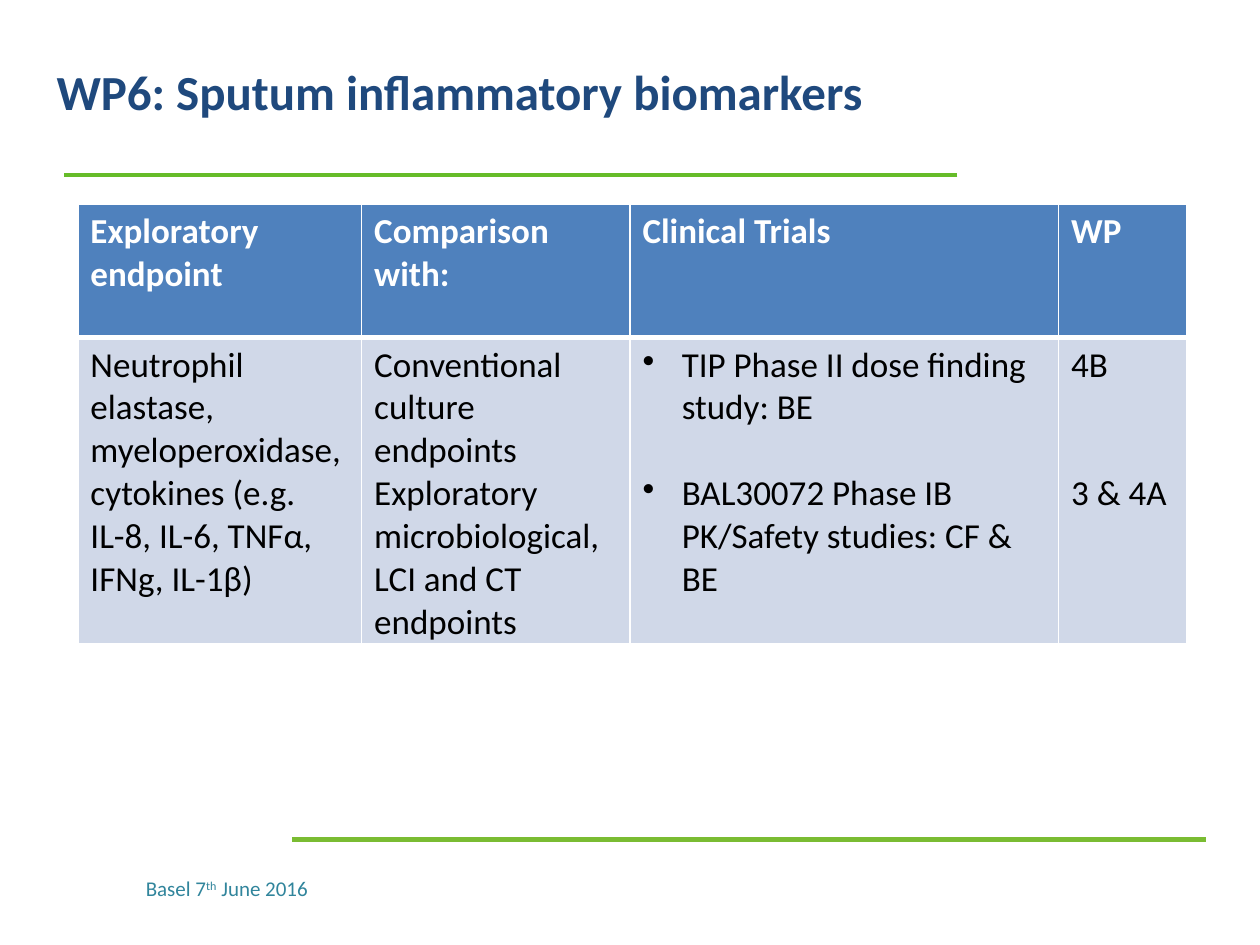
import pptx
import pptx.util
import pptx.dml.color
import pptx.enum.shapes
import pptx.enum.text
import pptx.oxml
import pptx.oxml.ns
from pptx.util import Cm

THEME = {
    "font": "Calibri",
    "title": "1F497D", "date": "31859C", "header": "4F81BD", "body": "D0D8E8",
    "white": "FFFFFF", "black": "000000",
    "title_size": 28, "table_size": 20, "date_size": 12, "blank_line": 24.4,
}
TITLE = "WP6: Sputum inflammatory biomarkers"
DATE = [("Basel 7", False), ("th", True), (" June 2016", False)]
RULES = [
    ((19.3, 3.53), (1.3, 3.53), "66BC29", 2.25),
    ((5.89, 16.92), (24.31, 16.92), "7ABC32", 2.5),
]
COLUMNS = [
    {"width": 5.72, "head": "Exploratory endpoint", "gap_lines": 0, "bullets": False,
     "body": ["Neutrophil elastase, myeloperoxidase, cytokines (e.g. IL-8, IL-6, TNFα, IFNg, IL-1β)"]},
    {"width": 5.41, "head": "Comparison with:", "gap_lines": 0, "bullets": False,
     "body": ["Conventional culture endpoints Exploratory microbiological, LCI and CT endpoints"]},
    {"width": 8.64, "head": "Clinical Trials", "gap_lines": 1, "bullets": True,
     "body": ["TIP Phase II dose finding study: BE",
              "BAL30072 Phase IB PK/Safety studies: CF & BE"]},
    {"width": 2.59, "head": "WP", "gap_lines": 2, "bullets": False,
     "body": ["4B", "3 & 4A"]},
]
ROW_HEIGHTS = [2.69, 6.1]
TABLE_LEFT, TABLE_TOP = 1.57, 4.11


def rgb(name):
    return pptx.dml.color.RGBColor.from_string(THEME.get(name, name))


def style(span, size, colour, bold=False):
    span.font.name = THEME["font"]
    span.font.size = pptx.util.Pt(THEME[size])
    span.font.color.rgb = rgb(colour)
    span.font.bold = bold


def add_box(page, left, top, width, height):
    box = page.shapes.add_textbox(Cm(left), Cm(top), Cm(width), Cm(height))
    box.text_frame.word_wrap = True
    return box.text_frame


def add_rule(page, start, end, colour, weight):
    rule = page.shapes.add_connector(
        pptx.enum.shapes.MSO_CONNECTOR.STRAIGHT, *map(Cm, start + end))
    rule.line.color.rgb = rgb(colour)
    rule.line.width = pptx.util.Pt(weight)
    rule._element.spPr.append(pptx.oxml.parse_xml(
        f'<a:effectLst {pptx.oxml.ns.nsdecls("a")}/>'))


def add_border(cell, side, weight):
    cell._tc.get_or_add_tcPr().append(pptx.oxml.parse_xml(
        f'<a:ln{side} {pptx.oxml.ns.nsdecls("a")} w="{pptx.util.Pt(weight)}">'
        f'<a:solidFill><a:srgbClr val="{THEME["white"]}"/></a:solidFill></a:ln{side}>'))


def add_bullet(para):
    properties = para._p.get_or_add_pPr()
    properties.set("marL", str(Cm(0.79)))
    properties.set("indent", str(-Cm(0.79)))
    properties.append(pptx.oxml.parse_xml(
        f'<a:buChar {pptx.oxml.ns.nsdecls("a")} char="•"/>'))


def fill_cell(cell, lines, fill, colour, bold, edges, gap_lines=0, bullets=False):
    for side, weight in zip("LRTB", edges):
        add_border(cell, side, weight)
    cell.fill.solid()
    cell.fill.fore_color.rgb = rgb(fill)
    cell.text_frame.text = "\n".join(lines)
    for index, para in enumerate(cell.text_frame.paragraphs):
        if index and gap_lines:
            para.space_before = pptx.util.Pt(gap_lines * THEME["blank_line"])
        if bullets:
            add_bullet(para)
        for span in para.runs:
            style(span, "table_size", colour, bold)


def add_endpoint_table(page):
    width = sum(column["width"] for column in COLUMNS)
    table = page.shapes.add_table(
        len(ROW_HEIGHTS), len(COLUMNS), Cm(TABLE_LEFT), Cm(TABLE_TOP),
        Cm(width), Cm(sum(ROW_HEIGHTS))).table
    for row, height in zip(table.rows, ROW_HEIGHTS):
        row.height = Cm(height)
    for index, column in enumerate(COLUMNS):
        table.columns[index].width = Cm(column["width"])
        fill_cell(table.cell(0, index), [column["head"]], "header", "white", True, (1, 1, 1, 3))
        fill_cell(table.cell(1, index), column["body"], "body", "black", False, (1, 1, 3, 1),
                  column["gap_lines"], column["bullets"])


def main():
    deck = pptx.Presentation()
    deck.slide_width, deck.slide_height = Cm(25.4), Cm(19.05)
    page = deck.slides.add_slide(deck.slide_layouts[6])
    for rule in RULES:
        add_rule(page, *rule)

    date = add_box(page, 2.69, 17.53, 4.39, 0.76)
    for text, raised in DATE:
        span = date.paragraphs[0].add_run()
        span.text = text
        style(span, "date_size", "date")
        if raised:
            span._r.get_or_add_rPr().set("baseline", "30000")

    title = add_box(page, 0.89, 0, 23.65, 3.68)
    title.vertical_anchor = pptx.enum.text.MSO_ANCHOR.MIDDLE
    title.text = TITLE
    style(title.paragraphs[0].runs[0], "title_size", "title", True)

    add_endpoint_table(page)
    deck.save("out.pptx")


if __name__ == "__main__":
    main()
